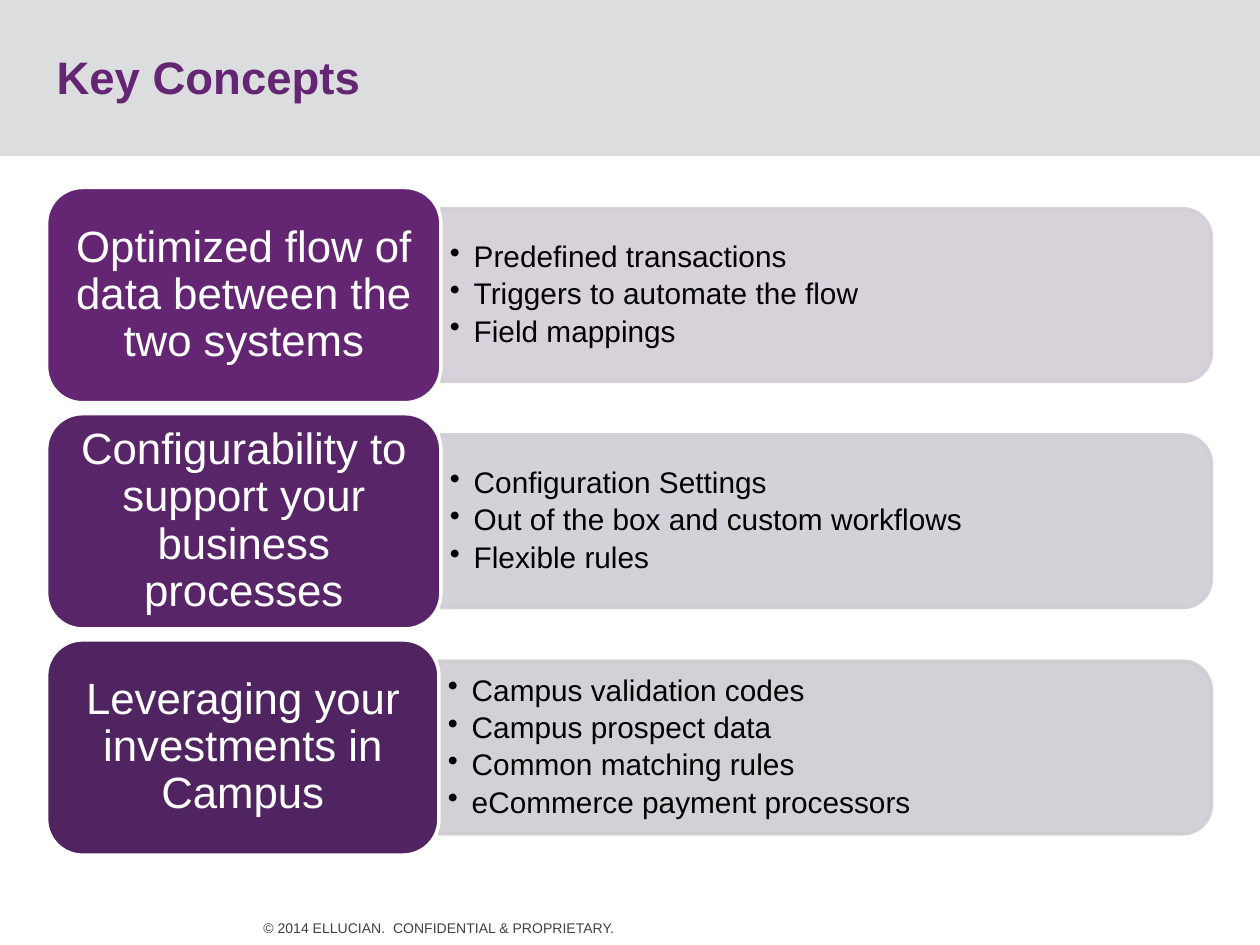
from typing import NamedTuple

from pptx import Presentation
from pptx import util as u
from pptx.dml.color import RGBColor
from pptx.enum import shapes, text
from pptx.oxml.ns import qn
from lxml import etree

COLORS = {
    "band": "DCDDDE",
    "title": "642673",
    "footer": "414042",
    "white": "FFFFFF",
    "black": "000000",
}
FONT = "Arial"
CARD_LEFT, CARD_TOP, CARD_HEIGHT, PITCH = 0.94, 3.78, 4.34, 4.56
PANEL_RIGHT, PANEL_HEIGHT = 24.42, 3.48
LIST_RIGHT, LIST_HEIGHT = 24.26, 3.12
BULLET_INDENT = 0.48


class Concept(NamedTuple):
    heading: str
    points: list[str]
    card_color: str
    panel_color: str
    card_width: float


CONCEPTS = [
    Concept("Optimized flow of data between the two systems",
            ["Predefined transactions", "Triggers to automate the flow", "Field mappings"],
            "642673", "D3CDD5", 7.95),
    Concept("Configurability to support your business processes",
            ["Configuration Settings", "Out of the box and custom workflows", "Flexible rules"],
            "592569", "D1CDD4", 7.95),
    Concept("Leveraging your investments in Campus",
            ["Campus validation codes", "Campus prospect data", "Common matching rules",
             "eCommerce payment processors"],
            "4F2460", "D0CDD2", 7.91),
]


def rgb(value: str) -> RGBColor:
    return RGBColor.from_string(value)


def format_paragraph(p, size: float, color: str, bold: bool = False,
                     align=text.PP_ALIGN.LEFT, spacing: float = 1.0) -> None:
    p.alignment = align
    p.line_spacing = spacing
    for r in p.runs:
        r.font.name = FONT
        r.font.size = u.Pt(size)
        r.font.bold = bold
        r.font.color.rgb = rgb(color)


def set_frame(tf, anchor, side: float = 0, end: float = 0) -> None:
    tf.word_wrap = True
    tf.vertical_anchor = anchor
    tf.margin_left = tf.margin_right = u.Cm(side)
    tf.margin_top = tf.margin_bottom = u.Cm(end)


def add_filled(s, kind, left: float, top: float, width: float, height: float,
               fill: str, line: str | None = None):
    sp = s.shapes.add_shape(kind, u.Cm(left), u.Cm(top), u.Cm(width), u.Cm(height))
    sp.shadow.inherit = False
    sp.fill.solid()
    sp.fill.fore_color.rgb = rgb(fill)
    if line:
        sp.line.color.rgb = rgb(line)
        sp.line.width = u.Pt(2)
    else:
        sp.line.fill.background()
    return sp


def add_panel(s, left: float, middle: float, color: str) -> None:
    length = PANEL_RIGHT - left
    sp = add_filled(s, shapes.MSO_SHAPE.ROUND_2_SAME_RECTANGLE,
                    left + (length - PANEL_HEIGHT) / 2, middle - length / 2,
                    PANEL_HEIGHT, length, color, color)
    sp.rotation = 90
    for clr in sp.element.spPr.iter(qn("a:srgbClr")):
        etree.SubElement(clr, qn("a:alpha")).set("val", "90000")


def add_points(s, left: float, middle: float, points: list[str]) -> None:
    box = s.shapes.add_textbox(u.Cm(left), u.Cm(middle - LIST_HEIGHT / 2),
                               u.Cm(LIST_RIGHT - left), u.Cm(LIST_HEIGHT))
    tf = box.text_frame
    set_frame(tf, text.MSO_ANCHOR.MIDDLE, 0.18, 0.1)
    tf.text = "\n".join(points)
    for p in tf.paragraphs:
        format_paragraph(p, 17, COLORS["black"], spacing=0.9)
        p.space_after = u.Pt(3)
        pPr = p._p.get_or_add_pPr()
        pPr.set("marL", str(u.Cm(BULLET_INDENT)))
        pPr.set("indent", str(-u.Cm(BULLET_INDENT)))
        etree.SubElement(pPr, qn("a:buChar")).set("char", "•")


def add_concept(s, concept: Concept, top: float) -> None:
    middle = top + CARD_HEIGHT / 2
    edge = CARD_LEFT + concept.card_width
    add_panel(s, edge, middle, concept.panel_color)
    add_points(s, edge, middle, concept.points)
    card = add_filled(s, shapes.MSO_SHAPE.ROUNDED_RECTANGLE, CARD_LEFT, top,
                      concept.card_width, CARD_HEIGHT, concept.card_color, COLORS["white"])
    tf = card.text_frame
    set_frame(tf, text.MSO_ANCHOR.MIDDLE, 0.25, 0.13)
    tf.text = concept.heading
    format_paragraph(tf.paragraphs[0], 25, COLORS["white"],
                     align=text.PP_ALIGN.CENTER, spacing=0.9)


def add_header(s) -> None:
    title = s.shapes.title
    title.left, title.top = u.Cm(1.14), u.Cm(0.33)
    title.width, title.height = u.Cm(23.09), u.Cm(2.57)
    tf = title.text_frame
    set_frame(tf, text.MSO_ANCHOR.MIDDLE)
    tf.text = "Key Concepts"
    format_paragraph(tf.paragraphs[0], 26, COLORS["title"], bold=True, spacing=0.85)
    band = add_filled(s, shapes.MSO_SHAPE.RECTANGLE, 0, 0, 25.4, 3.15, COLORS["band"])
    title.element.addprevious(band.element)


def add_footer(s) -> None:
    box = s.shapes.add_textbox(u.Cm(5.31), u.Cm(18.54), u.Cm(12.37), u.Cm(0.33))
    tf = box.text_frame
    set_frame(tf, text.MSO_ANCHOR.BOTTOM)
    tf.auto_size = text.MSO_AUTO_SIZE.SHAPE_TO_FIT_TEXT
    tf.text = "© 2014 ELLUCIAN.  CONFIDENTIAL & PROPRIETARY."
    format_paragraph(tf.paragraphs[0], 8, COLORS["footer"])


def main() -> None:
    prs = Presentation()
    prs.slide_width, prs.slide_height = u.Cm(25.4), u.Cm(19.05)
    s = prs.slides.add_slide(prs.slide_layouts[5])
    add_header(s)
    for i, concept in enumerate(CONCEPTS):
        add_concept(s, concept, CARD_TOP + i * PITCH)
    add_footer(s)
    prs.save("out.pptx")


if __name__ == "__main__":
    main()
